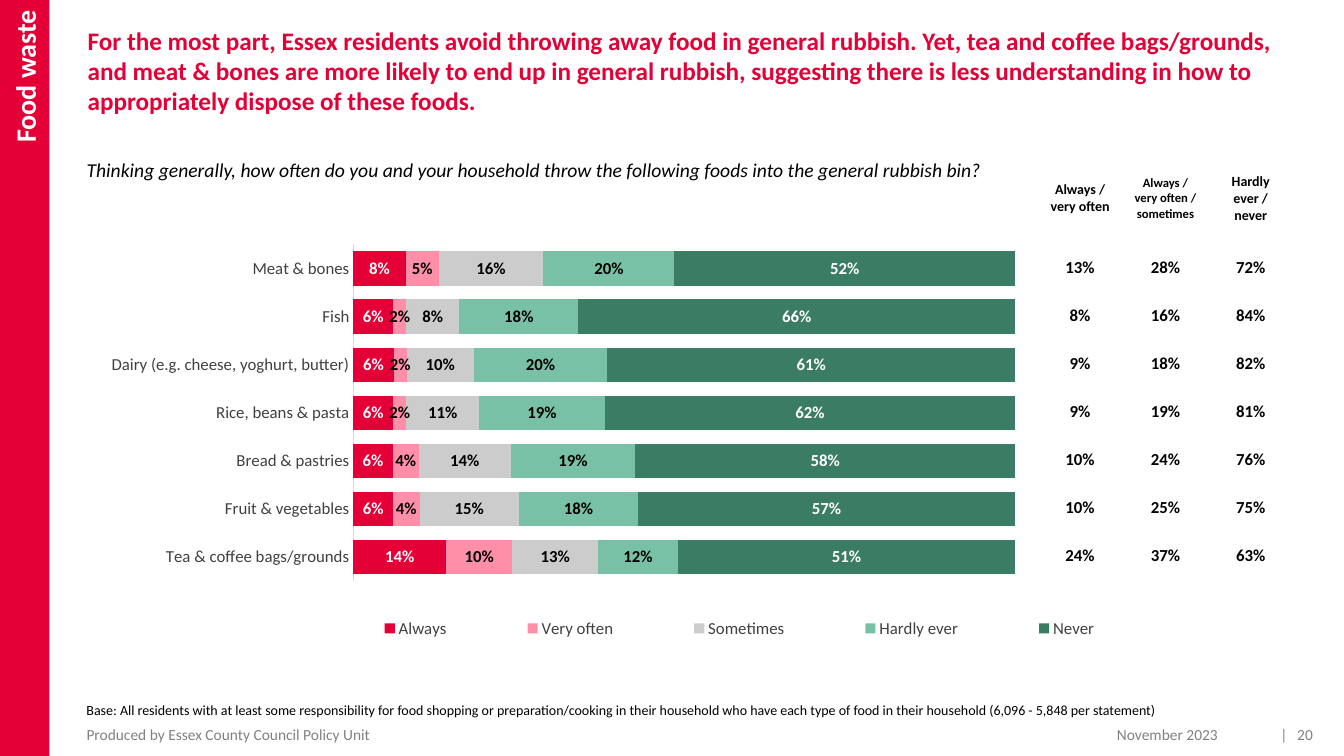
"""Build the food waste survey slide with its chart and summary table."""
from lxml import etree
from pptx import Presentation
from pptx.chart.data import CategoryChartData
from pptx.dml.color import RGBColor
from pptx.enum.chart import XL_CHART_TYPE, XL_LEGEND_POSITION, XL_TICK_MARK
from pptx.enum.shapes import MSO_SHAPE
from pptx.enum.text import MSO_ANCHOR, PP_ALIGN
from pptx.oxml.ns import qn
from pptx.util import Inches, Pt

STACKED = XL_CHART_TYPE.BAR_STACKED_100
BOTTOM = XL_LEGEND_POSITION.BOTTOM
NO_TICK = XL_TICK_MARK.NONE
RECTANGLE = MSO_SHAPE.RECTANGLE
TOP, MIDDLE = MSO_ANCHOR.TOP, MSO_ANCHOR.MIDDLE
LEFT, CENTER, RIGHT = PP_ALIGN.LEFT, PP_ALIGN.CENTER, PP_ALIGN.RIGHT

WIDTH, HEIGHT = Inches(13.33), Inches(7.5)
FONT = "Calibri"
RED, BLACK, WHITE, GREY, DARK_GREY = "E40037", "000000", "FFFFFF", "808080", "404040"

TITLE = (
    "For the most part, Essex residents avoid throwing away food in general rubbish. "
    "Yet, tea and coffee bags/grounds, and meat & bones are more likely to end up in "
    "general rubbish, suggesting there is less understanding in how to appropriately "
    "dispose of these foods."
)
QUESTION = (
    "Thinking generally, how often do you and your household throw the following "
    "foods into the general rubbish bin?"
)
BASE = (
    "Base: All residents with at least some responsibility for food shopping or "
    "preparation/cooking in their household who have each type of food in their "
    "household (6,096 - 5,848 per statement)"
)
FOODS = [
    "Meat & bones", "Fish", "Dairy (e.g. cheese, yoghurt, butter)",
    "Rice, beans & pasta", "Bread & pastries", "Fruit & vegetables",
    "Tea & coffee bags/grounds",
]
ANSWERS = [
    ("Always", RED, WHITE, [8, 6, 6, 6, 6, 6, 14]),
    ("Very often", "FF8EA9", BLACK, [5, 2, 2, 2, 4, 4, 10]),
    ("Sometimes", "CCCCCC", BLACK, [16, 8, 10, 11, 14, 15, 13]),
    ("Hardly ever", "79C1A6", BLACK, [20, 18, 20, 19, 19, 18, 12]),
    ("Never", "3A7D64", WHITE, [52, 66, 61, 62, 58, 57, 51]),
]
SUMMARY_HEADS = [
    ("Always / very often", 10),
    ("Always / very often / sometimes", 9),
    ("Hardly ever / never", 10),
]
SUMMARY = [
    (13, 28, 72), (8, 16, 84), (9, 18, 82), (9, 19, 81),
    (10, 24, 76), (10, 25, 75), (24, 37, 63),
]


def color(value):
    """Turn a hex string into a colour."""
    return RGBColor.from_string(value)


def place(left, top, width, height):
    """Turn percentages of the slide into lengths."""
    return (int(WIDTH * left / 100), int(HEIGHT * top / 100),
            int(WIDTH * width / 100), int(HEIGHT * height / 100))


def style_font(font, size, hue, bold=False, italic=False):
    """Set the face, size, colour and weight of a font."""
    font.name, font.size = FONT, Pt(size)
    font.bold, font.italic = bold, italic
    font.color.rgb = color(hue)


def fill_frame(frame, text, size, hue, align=LEFT, **weight):
    """Write one styled paragraph into a text frame."""
    frame.word_wrap = True
    para = frame.paragraphs[0]
    para.text, para.alignment = text, align
    style_font(para.font, size, hue, **weight)


def add_text(page, area, text, size, hue, align=LEFT, anchor=TOP, **weight):
    """Add a wrapping text box."""
    frame = page.shapes.add_textbox(*place(*area)).text_frame
    fill_frame(frame, text, size, hue, align, **weight)
    frame.vertical_anchor = anchor
    if align == RIGHT:
        frame.margin_right = 0


def add_sidebar(page, text):
    """Add the red bar with its upward-running section name."""
    bar = page.shapes.add_shape(RECTANGLE, *place(0, 0, 3.68, 100))
    bar.shadow.inherit = False
    bar.fill.solid()
    bar.fill.fore_color.rgb = color(RED)
    bar.line.fill.background()
    frame = bar.text_frame
    fill_frame(frame, text, 20, WHITE, RIGHT, bold=True)
    frame.vertical_anchor = MIDDLE
    frame.margin_top = Inches(0.1)
    bar.element.txBody.find(qn("a:bodyPr")).set("vert", "vert270")


def set_layout(parent, index, inner, **shares):
    """Fix a chart part at shares of the chart area."""
    for old in parent.findall(qn("c:layout")):
        parent.remove(old)
    layout = etree.Element(qn("c:layout"))
    manual = etree.SubElement(layout, qn("c:manualLayout"))
    settings = {"layoutTarget": "inner"} if inner else {}
    settings.update(xMode="edge", yMode="edge", **shares)
    for name, value in settings.items():
        etree.SubElement(manual, qn(f"c:{name}")).set("val", str(value))
    parent.insert(index, layout)


def add_answer_chart(page, area):
    """Add the stacked bars showing how often each food is binned."""
    data = CategoryChartData(number_format="0%")
    data.categories = FOODS
    for name, _, _, percents in ANSWERS:
        data.add_series(name, [percent / 100 for percent in percents])
    chart = page.shapes.add_chart(STACKED, *place(*area), data).chart
    style_font(chart.font, 10, BLACK)
    chart.has_title = False

    foods, shares = chart.category_axis, chart.value_axis
    foods.reverse_order = True
    foods.major_tick_mark = foods.minor_tick_mark = NO_TICK
    style_font(foods.tick_labels.font, 12, DARK_GREY)
    foods.format.line.color.rgb = color("D9D9D9")
    foods.format.line.width = Pt(0.75)
    shares.visible = shares.has_major_gridlines = False
    shares.minimum_scale, shares.maximum_scale = 0, 1

    plot = chart.plots[0]
    plot.gap_width, plot.overlap = 40, 100
    for series, (_, hue, label_hue, _) in zip(plot.series, ANSWERS):
        series.format.fill.solid()
        series.format.fill.fore_color.rgb = color(hue)
        labels = series.data_labels
        labels.show_value = True
        labels.number_format, labels.number_format_is_linked = "0%", False
        style_font(labels.font, 12, label_hue, bold=True)

    chart.has_legend = True
    chart.legend.position = BOTTOM
    chart.legend.include_in_layout = False
    style_font(chart.legend.font, 12, DARK_GREY)
    root = chart.element
    set_layout(root.find(".//" + qn("c:plotArea")), 0, True, x=0.25, y=0, w=0.6, h=0.82)
    set_layout(root.find(".//" + qn("c:legend")), 1, False, x=0.21, y=0.9, w=0.78, h=0.07)


def add_summary_table(page, area):
    """Add the unfilled table of combined answers."""
    rows = [SUMMARY_HEADS] + [[(f"{part}%", 12) for part in parts] for parts in SUMMARY]
    table = page.shapes.add_table(len(rows), len(SUMMARY_HEADS), *place(*area)).table
    table.first_row = table.horz_banding = False
    for index, entries in enumerate(rows):
        table.rows[index].height = int(HEIGHT * (0.06 * 2 if index == 0 else 0.0634))
        for column, (text, size) in enumerate(entries):
            cell = table.cell(index, column)
            cell.fill.background()
            cell.vertical_anchor = MIDDLE
            fill_frame(cell.text_frame, text, size, BLACK, CENTER, bold=True)


def main():
    """Build and save the slide."""
    deck = Presentation()
    deck.slide_width, deck.slide_height = WIDTH, HEIGHT
    page = deck.slides.add_slide(deck.slide_layouts[6])
    add_text(page, (5.7, 20.27, 90.55, 4.53), QUESTION, 14, BLACK, italic=True)
    add_answer_chart(page, (5.78, 32.27, 82.07, 54.4))
    add_text(page, (5.78, 2.67, 92.5, 15.73), TITLE, 18, RED, bold=True)
    add_sidebar(page, "Food waste")
    add_summary_table(page, (77.19, 20.27, 19.05, 56.4))
    add_text(page, (5.7, 92.13, 88.6, 3.6), BASE, 10, BLACK)
    add_text(page, (5.7, 96.13, 49, 2), "Produced by Essex County Council Policy Unit",
             11, GREY, anchor=MIDDLE)
    for left, width, text in [(72.62, 18, "November 2023"), (91.3, 4.5, "|"),
                              (94.5, 3.18, "20")]:
        add_text(page, (left, 96.13, width, 2), text, 11, GREY, RIGHT, MIDDLE)
    deck.save("out.pptx")


if __name__ == "__main__":
    main()
